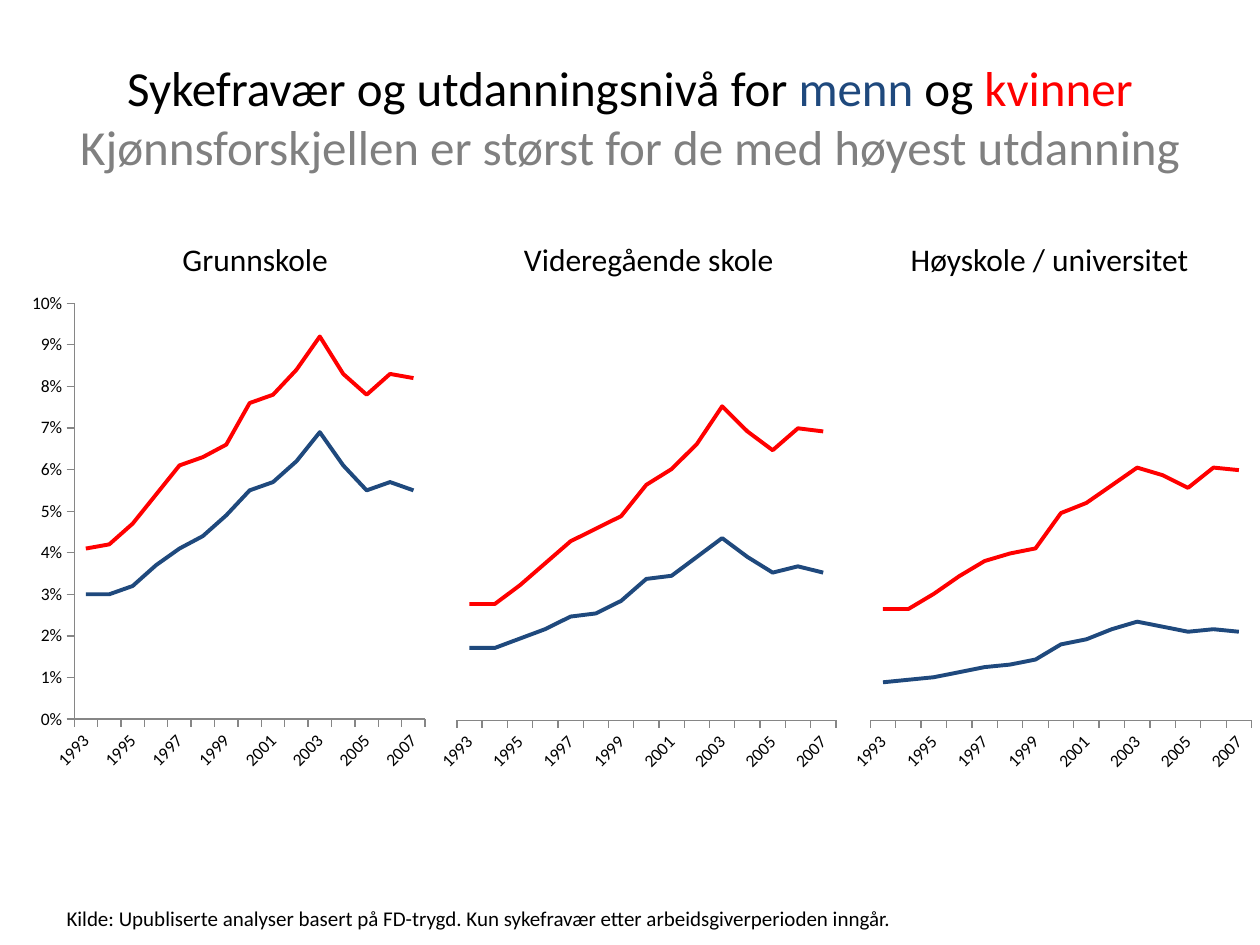
from dataclasses import dataclass

from lxml.etree import SubElement
from pptx import Presentation
from pptx.chart.data import CategoryChartData
from pptx.dml.color import RGBColor
from pptx.enum.chart import XL_CHART_TYPE as ChartType, XL_TICK_MARK as TickMark
from pptx.enum.text import MSO_ANCHOR as Anchor, PP_ALIGN as Align
from pptx.oxml import parse_xml
from pptx.oxml.ns import nsdecls, qn
from pptx.util import Inches, Pt

FONT = "Calibri"
BLACK, GREY, AXIS_GREY = "000000", "808080", "868686"
MEN, WOMEN = "1F497D", "FF0000"
YEARS = [str(year) for year in range(1993, 2008)]


@dataclass
class Panel:
    """One education level: heading and line chart."""
    heading: str
    heading_left: float
    heading_width: float
    left: float
    width: float
    height: float
    plot: tuple  # x, y, width, height as shares of the chart
    maximum: float
    women: list
    men: list
    show_scale: bool = False


PANELS = [
    Panel("Grunnskole", 1.35, 1.37, 0.2, 3.24, 3.93, (0.12, 0.04, 0.86, 0.84), 0.1,
          [0.041, 0.042, 0.047, 0.054, 0.061, 0.063, 0.066, 0.076,
           0.078, 0.084, 0.092, 0.083, 0.078, 0.083, 0.082],
          [0.03, 0.03, 0.032, 0.037, 0.041, 0.044, 0.049, 0.055,
           0.057, 0.062, 0.069, 0.061, 0.055, 0.057, 0.055],
          show_scale=True),
    Panel("Videregående skole", 4.06, 2.21, 3.43, 3.27, 3.94, (0.06, 0.02, 0.92, 0.86), 136,
          [37, 37, 43, 50, 57, 61, 65, 75, 80, 88, 100, 92, 86, 93, 92],
          [23, 23, 26, 29, 33, 34, 38, 45, 46, 52, 58, 52, 47, 49, 47]),
    Panel("Høyskole / universitet", 7.13, 2.43, 6.71, 3.29, 3.94, (0.06, 0.02, 0.92, 0.86), 169,
          [44, 44, 50, 57, 63, 66, 68, 82, 86, 93, 100, 97, 92, 100, 99],
          [15, 16, 17, 19, 21, 22, 24, 30, 32, 36, 39, 37, 35, 36, 35]),
]


def rgb(color: str) -> RGBColor:
    return RGBColor.from_string(color)


def add_label(slide, text: str, left: float, top: float, width: float,
              height: float, size: float) -> None:
    box = slide.shapes.add_textbox(Inches(left), Inches(top), Inches(width), Inches(height))
    box.text_frame.word_wrap = False
    paragraph = box.text_frame.paragraphs[0]
    paragraph.text = text
    paragraph.font.name, paragraph.font.size = FONT, Pt(size)
    paragraph.font.color.rgb = rgb(BLACK)


def set_plot_area(chart, plot: tuple) -> None:
    """Fix the inner plot area as shares of the chart."""
    area = chart._chartSpace.chart.plotArea
    for old in area.findall(qn("c:layout")):
        area.remove(old)
    layout = parse_xml(f"<c:layout {nsdecls('c')}/>")
    manual = SubElement(layout, qn("c:manualLayout"))
    settings = [("layoutTarget", "inner"), ("xMode", "edge"), ("yMode", "edge"),
                *zip("xywh", plot)]
    for tag, value in settings:
        SubElement(manual, qn(f"c:{tag}")).set("val", str(value))
    area.insert(0, layout)


def style_axes(chart, panel: Panel) -> None:
    years, scale = chart.category_axis, chart.value_axis
    for axis in (years, scale):
        axis.has_major_gridlines = False
        axis.major_tick_mark = TickMark.OUTSIDE
        axis.format.line.color.rgb = rgb(AXIS_GREY)
        axis.format.line.width = Pt(0.75)
    scale.minimum_scale, scale.maximum_scale = 0, panel.maximum
    scale.tick_labels.number_format = "0%"
    scale.tick_labels.number_format_is_linked = False
    scale.visible = panel.show_scale
    if panel.show_scale:
        scale.major_unit = 0.01

    # Slanted labels for every second year
    years.tick_labels.font.size = Pt(10)
    years._element.find(qn("c:txPr")).find(qn("a:bodyPr")).set("rot", "-2700000")
    skip = parse_xml(f'<c:tickLblSkip {nsdecls("c")} val="2"/>')
    years._element.find(qn("c:noMultiLvlLbl")).addprevious(skip)


def add_panel(slide, panel: Panel) -> None:
    data = CategoryChartData(number_format="0%")
    data.categories = YEARS
    data.add_series("Series 1", panel.women)
    data.add_series("Series 2", panel.men)
    chart = slide.shapes.add_chart(
        ChartType.LINE, Inches(panel.left), Inches(2.25),
        Inches(panel.width), Inches(panel.height), data).chart
    chart.has_legend = chart.has_title = False
    chart.font.name, chart.font.size = FONT, Pt(10)
    chart.font.color.rgb = rgb(BLACK)
    chart.plots[0].vary_by_categories = False
    for series, color in zip(chart.plots[0].series, (WOMEN, MEN)):
        series.smooth = False
        series.format.line.color.rgb = rgb(color)
        series.format.line.width = Pt(2.25)
    style_axes(chart, panel)
    set_plot_area(chart, panel.plot)
    add_label(slide, panel.heading, panel.heading_left, 1.86, panel.heading_width, 0.4, 18)


def add_title(slide) -> None:
    title = slide.shapes.title
    title.left, title.top = Inches(0.5), Inches(0.3)
    title.width, title.height = Inches(9), Inches(1.25)
    title.text_frame.vertical_anchor = Anchor.MIDDLE
    paragraph = title.text_frame.paragraphs[0]
    paragraph.alignment = Align.CENTER
    paragraph.font.name, paragraph.font.size = FONT, Pt(28)

    def add_run(text: str, color: str) -> None:
        run = paragraph.add_run()
        run.text = text
        run.font.color.rgb = rgb(color)

    for text, color in (("Sykefravær og utdanningsnivå for ", BLACK), ("menn", MEN),
                        (" og ", BLACK), ("kvinner", WOMEN)):
        add_run(text, color)
    paragraph.add_line_break()
    add_run("Kjønnsforskjellen er størst for de med høyest utdanning", GREY)


def main() -> None:
    deck = Presentation()
    deck.slide_width, deck.slide_height = Inches(10), Inches(7.5)
    slide = deck.slides.add_slide(deck.slide_layouts[5])
    add_title(slide)
    for panel in PANELS:
        add_panel(slide, panel)
    # Source note
    add_label(slide, "Kilde: Upubliserte analyser basert på FD-trygd. "
              "Kun sykefravær etter arbeidsgiverperioden inngår.", 0.43, 7.14, 6.8, 0.3, 12)
    deck.save("out.pptx")


if __name__ == "__main__":
    main()
